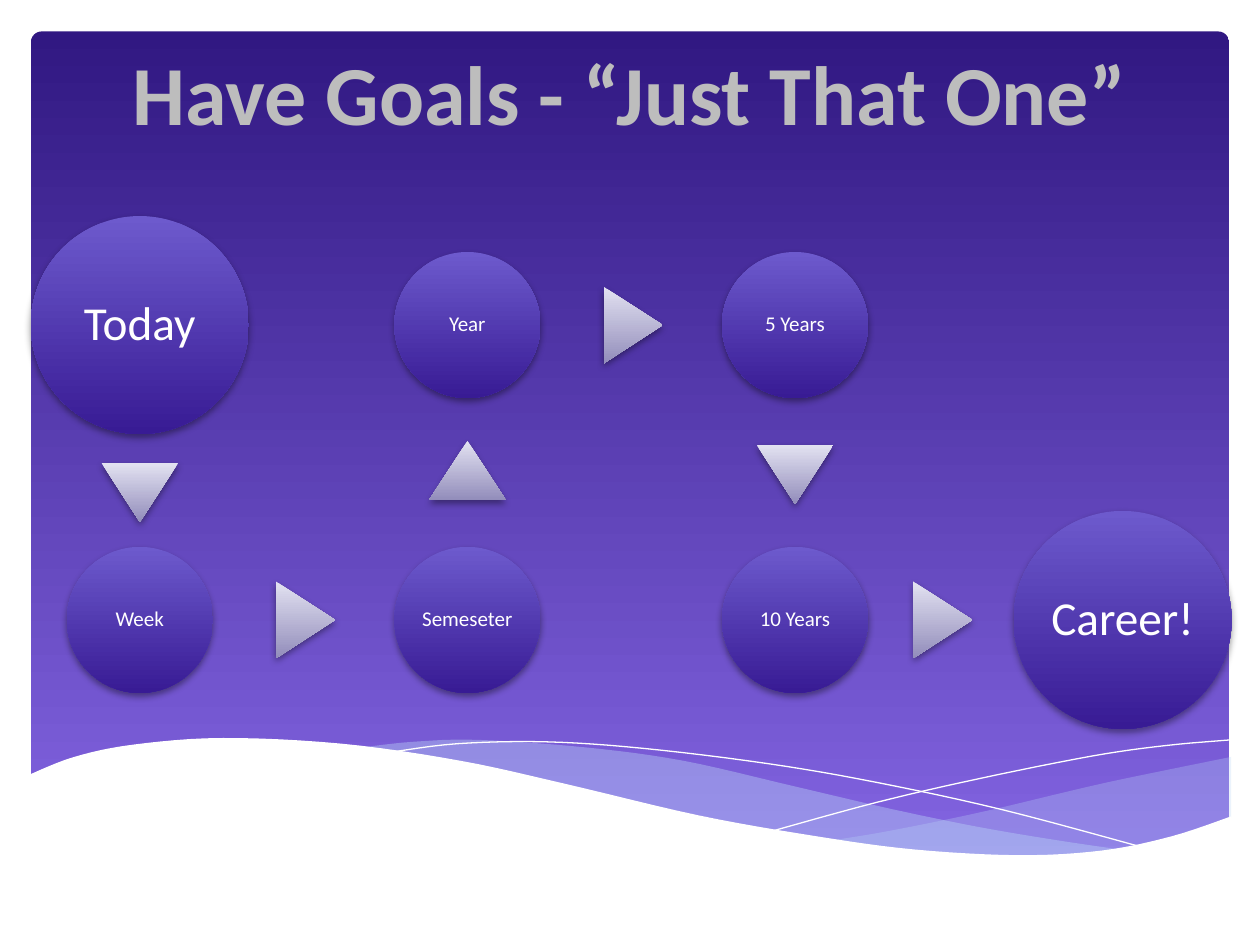
from dataclasses import dataclass
from typing import NamedTuple

from lxml import etree
from pptx import Presentation
from pptx.dml.color import RGBColor
from pptx.enum.shapes import MSO_SHAPE
from pptx.enum.text import MSO_ANCHOR, MSO_AUTO_SIZE, PP_ALIGN
from pptx.oxml.ns import qn
from pptx.util import Inches, Pt

CIRCLE, TRIANGLE = MSO_SHAPE.OVAL, MSO_SHAPE.ISOSCELES_TRIANGLE
PANEL = MSO_SHAPE.ROUNDED_RECTANGLE
CENTER, MIDDLE, BOTTOM = PP_ALIGN.CENTER, MSO_ANCHOR.MIDDLE, MSO_ANCHOR.BOTTOM
WIDTH, HEIGHT = Inches(10), Inches(7.5)
TITLE_ONLY = 5


@dataclass(frozen=True)
class Theme:
    font: str = "Calibri"
    title: str = "BDBDBD"
    white: str = "FFFFFF"
    mist: str = "BBD7F8"
    shadow: str = "000000"
    panel: tuple = ("311882", "8365E2")
    goal: tuple = ("6D5ACD", "381B94")
    arrow: tuple = ("E3E2F1", "928DBB")
    title_size: int = 48
    major_size: int = 27
    minor_size: int = 12


class Goal(NamedTuple):
    label: str
    column: int
    row: int
    major: bool = False

    @property
    def center(self) -> tuple:
        return 1.11 + 2.6 * self.column, 2.58 + 2.34 * self.row

    @property
    def diameter(self) -> float:
        return 1.73 if self.major else 1.16


class Wave(NamedTuple):
    """Outline made of smooth edges, in percent of the slide's size."""
    edges: tuple
    color: str
    opacity: int = 100
    filled: bool = True


THEME = Theme()
ARROW_WIDTH, ARROW_HEIGHT, ARROW_SHIFT = 0.61, 0.47, 0.015

# Each goal leads to the next one in the list.
GOALS = [
    Goal("Today", 0, 0, major=True), Goal("Week", 0, 1),
    Goal("Semeseter", 1, 1), Goal("Year", 1, 0),
    Goal("5 Years", 2, 0), Goal("10 Years", 2, 1),
    Goal("Career!", 3, 1, major=True),
]

WAVES = [
    Wave((((97.7, 80.1), (90.7, 82), (86.2, 83.3), (78, 85.9), (70.7, 87.9), (66.2, 88.9)),
          ((66.2, 88.9), (71.9, 89.9), (77, 90.5), (82.5, 90.5), (87.3, 90.1),
           (92.2, 88.9), (95.1, 87.9), (97.7, 86.5))), THEME.mist, 29),
    Wave((((28.7, 79.1), (32.8, 78.5), (38, 78.3), (46.5, 79.1), (54.2, 80.5),
           (63, 83.2), (70.7, 85.6), (77.6, 87.5), (83.8, 88.9), (89.4, 90)),
          ((89.4, 90), (83.9, 90.5), (77.4, 90.5), (69.6, 89.6), (61.9, 88),
           (53, 85.6), (45, 83.2), (38.3, 81.2), (32.3, 79.7), (28.7, 79.1))),
         THEME.mist, 40),
    Wave((((31, 79.6), (36.3, 78.7), (43.3, 78.5), (51.1, 79.2), (60.9, 80.8),
           (69.6, 82.8), (79.6, 85.7), (90.8, 89.7)),), THEME.white, filled=False),
    Wave((((61.4, 87.9), (69.6, 84.9), (77.7, 82.4), (86.7, 80), (92.5, 78.9),
           (97.6, 78.3)),), THEME.white, filled=False),
    Wave((((2.3, 82), (5.9, 80.1), (10.6, 78.8), (17.7, 78.1), (27.1, 78.7),
           (36.5, 80.5), (44.7, 82.9), (55.5, 86.3), (64.8, 88.5), (72.6, 89.9),
           (80.9, 90.5), (87.5, 90), (93, 88.5), (97.7, 86.4)),
          ((97.7, 97.5), (2.3, 97.5))), THEME.white),
]


def smooth(knots: tuple, steps: int = 6) -> list:
    """Return points of a Catmull-Rom curve through the knots."""
    padded = (knots[0], *knots, knots[-1])
    points = [knots[0]]
    for a, b, c, d in zip(padded, padded[1:], padded[2:], padded[3:]):
        for step in range(1, steps + 1):
            t = step / steps
            points.append(tuple(
                0.5 * (2 * q + (r - p) * t + (2 * p - 5 * q + 4 * r - s) * t ** 2
                       + (3 * q - p - 3 * r + s) * t ** 3)
                for p, q, r, s in zip(a, b, c, d)))
    return points


def draw_wave(slide, wave: Wave) -> None:
    points = [(WIDTH * x / 100, HEIGHT * y / 100)
              for edge in wave.edges for x, y in smooth(edge)]
    builder = slide.shapes.build_freeform(*points[0])
    builder.add_line_segments(points[1:], close=wave.filled)
    shape = builder.convert_to_shape()
    shape.shadow.inherit = False
    color = RGBColor.from_string(wave.color)
    if not wave.filled:
        shape.fill.background()
        shape.line.color.rgb = color
        shape.line.width = Pt(0)
        return
    shape.line.fill.background()
    shape.fill.solid()
    shape.fill.fore_color.rgb = color
    if wave.opacity < 100:
        tint = shape.element.spPr.find(".//" + qn("a:srgbClr"))
        etree.SubElement(tint, qn("a:alpha"), val=str(wave.opacity * 1000))


def add_gradient_shape(slide, kind, center: tuple, size: tuple, colors: tuple,
                       rotation: int = 0):
    """Add an unlined shape shaded from top to bottom, however it is turned."""
    (x, y), (width, height) = center, size
    shape = slide.shapes.add_shape(kind, Inches(x - width / 2), Inches(y - height / 2),
                                   Inches(width), Inches(height))
    shape.rotation = rotation
    shape.shadow.inherit = False
    shape.line.fill.background()
    shape.fill.gradient()
    shape.fill.gradient_angle = 270
    for stop, color in zip(shape.fill.gradient_stops, colors):
        stop.color.rgb = RGBColor.from_string(color)
    shape.element.spPr.find(qn("a:gradFill")).set("rotWithShape", "0")
    return shape


def cast_shadow(shape) -> None:
    effects = shape.element.spPr.find(qn("a:effectLst"))
    shadow = etree.SubElement(effects, qn("a:outerShdw"), blurRad=str(Pt(4)),
                              dist=str(Pt(2)), dir="5400000", rotWithShape="0")
    color = etree.SubElement(shadow, qn("a:srgbClr"), val=THEME.shadow)
    etree.SubElement(color, qn("a:alpha"), val="38000")


def write(shape, text: str, *, size: int, color: str, bold: bool = False,
          anchor=MIDDLE, inset: float = 0.1, spacing: float = 1.0) -> None:
    frame = shape.text_frame
    frame.word_wrap = True
    frame.auto_size = MSO_AUTO_SIZE.NONE
    frame.vertical_anchor = anchor
    frame.margin_left = frame.margin_right = Inches(inset)
    frame.margin_top = frame.margin_bottom = Inches(min(inset, 0.05))
    paragraph = frame.paragraphs[0]
    paragraph.alignment = CENTER
    paragraph.line_spacing = spacing
    run = paragraph.add_run()
    run.text = text
    run.font.name, run.font.size, run.font.bold = THEME.font, Pt(size), bold
    run.font.color.rgb = RGBColor.from_string(color)


def draw_goal(slide, goal: Goal) -> None:
    circle = add_gradient_shape(slide, CIRCLE, goal.center, (goal.diameter,) * 2, THEME.goal)
    cast_shadow(circle)
    write(circle, goal.label, color=THEME.white, spacing=0.9,
          size=THEME.major_size if goal.major else THEME.minor_size,
          inset=0.04 if goal.major else 0.02)


def draw_arrow(slide, start: Goal, end: Goal) -> None:
    """Put a triangle in the middle of the gap between two goals."""
    across, down = end.column - start.column, end.row - start.row
    shift = (start.diameter - end.diameter) / 4 + ARROW_SHIFT
    (x1, y1), (x2, y2) = start.center, end.center
    center = ((x1 + x2) / 2 + across * shift, (y1 + y2) / 2 + down * shift)
    rotation = 90 if across else 90 + 90 * down
    cast_shadow(add_gradient_shape(slide, TRIANGLE, center, (ARROW_WIDTH, ARROW_HEIGHT),
                                   THEME.arrow, rotation))


def main() -> None:
    deck = Presentation()
    deck.slide_width, deck.slide_height = WIDTH, HEIGHT
    slide = deck.slides.add_slide(deck.slide_layouts[TITLE_ONLY])

    panel = add_gradient_shape(slide, PANEL, (5, 3.55), (9.51, 6.6), THEME.panel)
    panel.adjustments[0] = 0.013
    for wave in WAVES:
        draw_wave(slide, wave)

    title = slide.shapes.title
    title.left, title.top = int(WIDTH * 0.049), int(HEIGHT * 0.049)
    title.width, title.height = int(WIDTH * 0.901), int(HEIGHT * 0.108)
    write(title, "Have Goals - “Just That One”", size=THEME.title_size,
          color=THEME.title, bold=True, anchor=BOTTOM)
    title.element.getparent().append(title.element)  # in front of the panel

    for goal in GOALS:
        draw_goal(slide, goal)
    for start, end in zip(GOALS, GOALS[1:]):
        draw_arrow(slide, start, end)
    deck.save("out.pptx")


if __name__ == "__main__":
    main()
